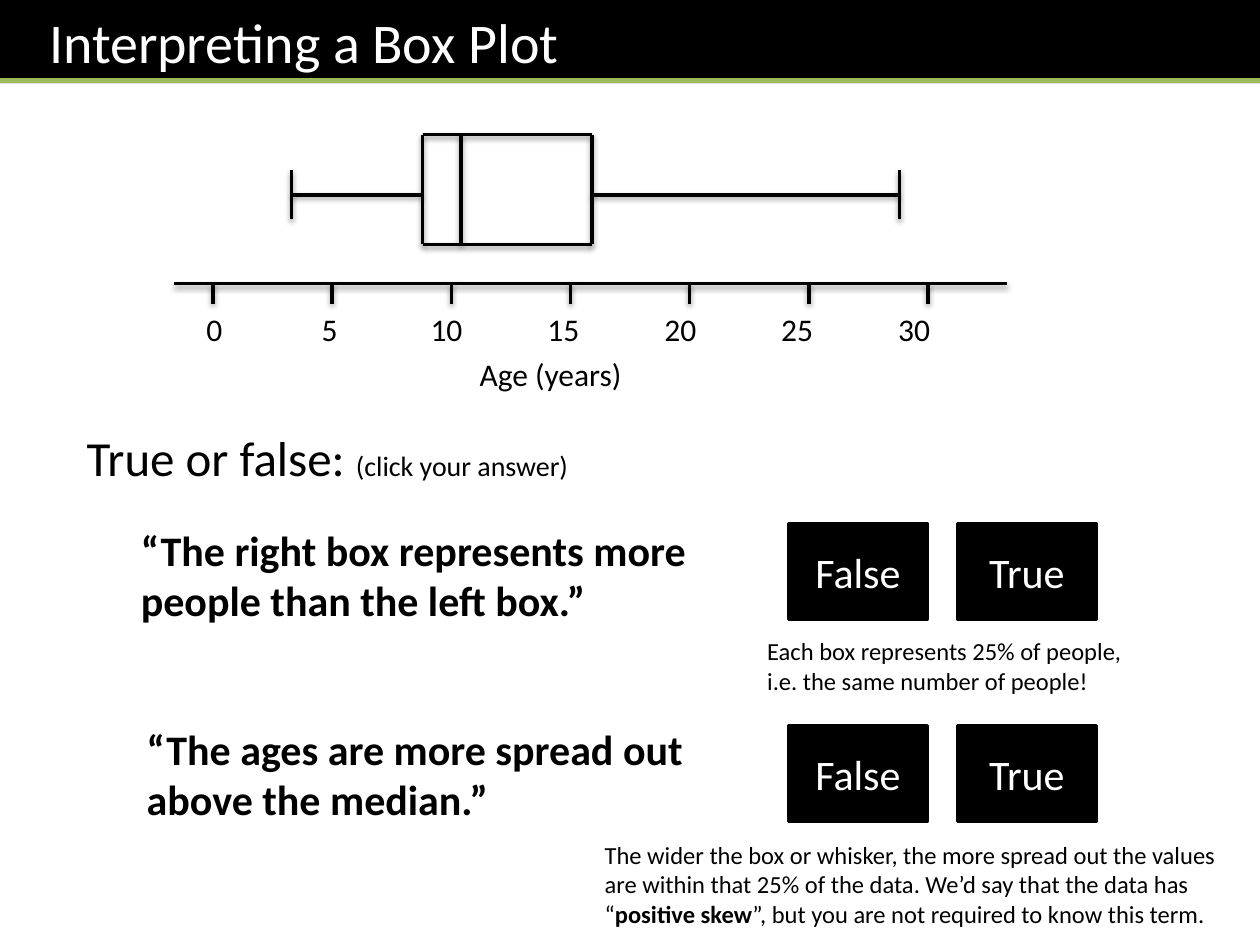
from dataclasses import dataclass

from lxml import etree
from pptx import Presentation
from pptx import util as u
from pptx.dml import color
from pptx.enum import shapes, text
from pptx.oxml import ns

Pt = u.Pt


@dataclass(frozen=True)
class Theme:
    font: str = "Calibri"
    black: str = "000000"
    white: str = "FFFFFF"
    green: str = "9BBB59"
    title: int = 32
    prompt: int = 28
    statement: int = 24
    axis: int = 18
    hint: int = 16
    note: int = 14
    stroke: int = 2
    rule: int = 3


THEME = Theme()

# Age axis: position of zero and points per year
AXIS_ZERO, YEAR = 121.7, 13.62
TICK_AGES = range(0, 31, 5)
LABEL_PITCH = 66.8

# Five-number summary of the ages
LOW, Q1, MEDIAN, Q3, HIGH = 3.3, 8.8, 10.4, 15.9, 28.8


def rgb(code):
    return color.RGBColor.from_string(code)


def age_x(age):
    return AXIS_ZERO + YEAR * age


def add_span(para, words, size, ink=THEME.black, bold=False):
    span = para.add_run()
    span.text = words
    span.font.name = THEME.font
    span.font.size = Pt(size)
    span.font.bold = bold
    span.font.color.rgb = rgb(ink)


def add_text(page, left, top, width, height, spans, align=text.PP_ALIGN.LEFT):
    """Add a wrapped text box; each span is (words, size[, ink, bold])."""
    box = page.shapes.add_textbox(Pt(left), Pt(top), Pt(width), Pt(height))
    box.text_frame.word_wrap = True
    para = box.text_frame.paragraphs[0]
    para.alignment = align
    for span in spans:
        add_span(para, *span)
    return box


def add_line(page, x1, y1, x2, y2, ink=THEME.black, width=THEME.stroke,
             shadow=True):
    line = page.shapes.add_connector(
        shapes.MSO_CONNECTOR.STRAIGHT, Pt(x1), Pt(y1), Pt(x2), Pt(y2))
    line.line.color.rgb = rgb(ink)
    line.line.width = Pt(width)
    effects = etree.SubElement(line._element.spPr, ns.qn("a:effectLst"))
    if shadow:
        outer = etree.SubElement(
            effects, ns.qn("a:outerShdw"), blurRad=str(Pt(3.1)),
            dist=str(Pt(1.6)), dir="5400000", rotWithShape="0")
        ink_node = etree.SubElement(outer, ns.qn("a:srgbClr"), val=THEME.black)
        etree.SubElement(ink_node, ns.qn("a:alpha"), val="38000")


def add_button(page, left, top, words):
    box = page.shapes.add_shape(
        shapes.MSO_SHAPE.RECTANGLE, Pt(left), Pt(top), Pt(79.2), Pt(54.7))
    box.shadow.inherit = False
    box.fill.solid()
    box.fill.fore_color.rgb = rgb(THEME.black)
    box.line.color.rgb = rgb(THEME.black)
    box.line.width = Pt(THEME.stroke)
    box.text_frame.vertical_anchor = text.MSO_ANCHOR.MIDDLE
    para = box.text_frame.paragraphs[0]
    para.alignment = text.PP_ALIGN.CENTER
    add_span(para, words, THEME.statement, THEME.white)


def add_title(page, words):
    box = page.shapes.title
    box.left, box.top, box.width, box.height = Pt(0), Pt(0), Pt(720), Pt(47.5)
    box.fill.solid()
    box.fill.fore_color.rgb = rgb(THEME.black)
    frame = box.text_frame
    frame.auto_size = text.MSO_AUTO_SIZE.NONE
    frame.vertical_anchor = text.MSO_ANCHOR.MIDDLE
    frame.margin_left = Pt(28)
    frame.paragraphs[0].alignment = text.PP_ALIGN.LEFT
    add_span(frame.paragraphs[0], words, THEME.title, THEME.white)
    add_line(page, 0, 46, 720, 46, THEME.green, THEME.rule, shadow=False)


def add_axis(page):
    level = 162
    add_line(page, 99.5, level, 575.5, level)
    for age in TICK_AGES:
        add_line(page, age_x(age), level + 11.5, age_x(age), level)

    # Tick labels share one line, centred on evenly spaced tab stops
    labels = "\t".join(str(age) for age in TICK_AGES)
    box = add_text(page, 110.9, 173.5, 453.6, 29, [(labels, THEME.axis)])
    props = box.text_frame.paragraphs[0]._p.get_or_add_pPr()
    stops = etree.SubElement(props, ns.qn("a:tabLst"))
    for step in range(1, len(TICK_AGES)):
        etree.SubElement(stops, ns.qn("a:tab"), algn="ctr",
                         pos=str(Pt(3.6 + step * LABEL_PITCH)))
    add_text(page, 172.8, 199.4, 283.7, 29, [("Age (years)", THEME.axis)],
             text.PP_ALIGN.CENTER)


def add_box_plot(page):
    top, middle, bottom = 77, 111.3, 139.7
    for age in (LOW, HIGH):
        add_line(page, age_x(age), 97.2, age_x(age), 125.3)
    for age in (Q1, MEDIAN, Q3):
        add_line(page, age_x(age), top, age_x(age), bottom)
    for start, end, y in ((Q1, Q3, top), (Q1, Q3, bottom),
                          (LOW, Q1, middle), (Q3, HIGH, middle)):
        add_line(page, age_x(start), y, age_x(end), y)


def add_question(page, left, top, statement, button_top):
    box = add_text(page, left, top, 337.7, 65.4,
                   [(statement, THEME.statement, THEME.black, True)])
    box.fill.solid()
    box.fill.fore_color.rgb = rgb(THEME.white)
    for button_left, answer in ((450.7, "False"), (547.2, "True")):
        add_button(page, button_left, button_top, answer)


def main():
    deck = Presentation()
    deck.slide_width, deck.slide_height = Pt(720), Pt(540)
    page = deck.slides.add_slide(deck.slide_layouts.get_by_name("Title Only"))

    # Heading and plot
    add_title(page, "Interpreting a Box Plot")
    add_axis(page)
    add_box_plot(page)

    # Questions with their answers
    add_text(page, 42.5, 240.5, 424.8, 41,
             [("True or false: ", THEME.prompt),
              ("(click your answer)", THEME.hint)])
    add_question(page, 73.4, 295.9,
                 "“The right box represents more people than the left box.”",
                 299.2)
    add_text(page, 431.3, 360, 231.8, 41,
             [("Each box represents 25% of people, "
               "i.e. the same number of people!", THEME.note)])
    add_question(page, 76.7, 409.7,
                 "“The ages are more spread out above the median.”", 414.7)
    add_text(page, 338.4, 476.3, 373, 58.3,
             [("The wider the box or whisker, the more spread out the values "
               "are within that 25% of the data. We’d say that the data has “",
               THEME.note),
              ("positive skew", THEME.note, THEME.black, True),
              ("”, but you are not required to know this term.", THEME.note)])

    deck.save("out.pptx")


if __name__ == "__main__":
    main()
